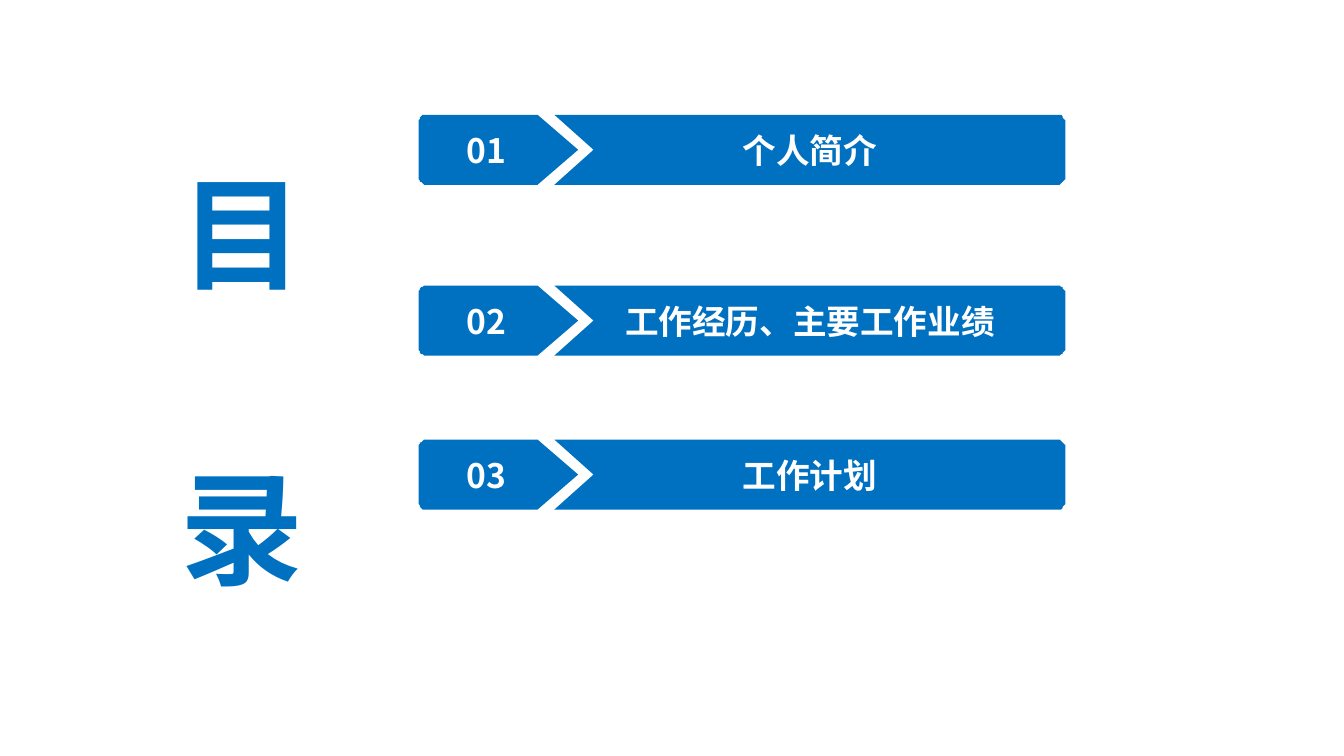
from math import cos, sin, radians

from pptx import Presentation
from pptx.dml.color import RGBColor
from pptx.enum.text import MSO_ANCHOR as Anchor, MSO_AUTO_SIZE as Fit, PP_ALIGN as Align
from pptx.util import Pt

BLUE = RGBColor(0x00, 0x70, 0xC0)
WHITE = RGBColor(0xFF, 0xFF, 0xFF)
FONT = "Noto Sans CJK SC"
HIGH, NOTCH, CURVE = 50.4, 28.4, 6.5


def write(frame, text, size=24, color=WHITE, align=Align.CENTER,
          anchor=Anchor.MIDDLE, pad=(8, 3.6, 8, 3.6), space=None):
    """Put one bold paragraph in a text frame."""
    frame.word_wrap = True
    frame.vertical_anchor = anchor
    frame.margin_left, frame.margin_top, frame.margin_right, frame.margin_bottom = map(Pt, pad)
    para = frame.paragraphs[0]
    para.alignment = align
    run = para.add_run()
    run.text = text
    font = run.font
    font.size, font.bold, font.name = Pt(size), True, FONT
    font.color.rgb = color
    props = run._r.get_or_add_rPr()
    if space:
        props.set("spc", str(space))
    east = props.makeelement(props.tag.replace("rPr", "ea"), {"typeface": FONT})
    props.find(props.tag.replace("rPr", "latin")).addnext(east)


def bend(x, y, start):
    """List the points of a quarter circle about a centre."""
    turns = [radians(start + step) for step in range(0, 91, 10)]
    return [(x + CURVE * cos(turn), y + CURVE * sin(turn)) for turn in turns]


class Deck:
    """Hold the style and the current slide."""

    def __init__(self):
        """Open a wide deck with one blank slide."""
        self.show = Presentation()
        self.show.slide_width, self.show.slide_height = Pt(960), Pt(540)
        self.slide = self.show.slides.add_slide(self.show.slide_layouts[6])

    def title(self, text, left, top, wide, high):
        """Add the tall heading."""
        box = self.slide.shapes.add_textbox(Pt(left), Pt(top), Pt(wide), Pt(high))
        write(box.text_frame, text, size=88, color=BLUE, align=Align.LEFT,
              anchor=Anchor.TOP, pad=(7.2, 3.6, 7.2, 3.6), space=370)
        box.text_frame.auto_size = Fit.SHAPE_TO_FIT_TEXT

    def block(self, dots, text, **form):
        """Add a filled outline with text."""
        pen = self.slide.shapes.build_freeform(*dots[0], scale=Pt(1))
        pen.add_line_segments(dots[1:], close=True)
        shape = pen.convert_to_shape()
        shape.shadow.inherit = False
        shape.fill.solid()
        shape.fill.fore_color.rgb = BLUE
        shape.line.fill.background()
        write(shape.text_frame, text, **form)

    def panel(self, text, left, top, wide):
        """Add a bar notched on the left and rounded on the right."""
        right, base = left + wide, top + HIGH
        dots = [(left, top), *bend(right - CURVE, top + CURVE, 270),
                *bend(right - CURVE, base - CURVE, 0),
                (left, base), (left + NOTCH, top + HIGH / 2)]
        self.block(dots, text)

    def tab(self, text, left, top, wide):
        """Add an arrow tab rounded on the left."""
        tip, base = left + wide, top + HIGH
        dots = [*bend(left + CURVE, top + CURVE, 180), (tip - NOTCH, top),
                (tip, top + HIGH / 2), (tip - NOTCH, base),
                *bend(left + CURVE, base - CURVE, 90)]
        self.block(dots, text, pad=(8, 3.6, 25.2, 3.6))


def main():
    """Build and save the contents slide."""
    deck = Deck()
    deck.title("目 录", 121.7, 108.7, 85.7, 220.3)
    items = [("个人简介", 81.6), ("工作经历、主要工作业绩", 203.8), ("工作计划", 314)]
    for rank, (text, top) in enumerate(items, 1):
        deck.panel(text, 396, top, 365)
        deck.tab(f"{rank:02}", 298.8, top, 113.8)
    deck.show.save("out.pptx")


if __name__ == "__main__":
    main()
